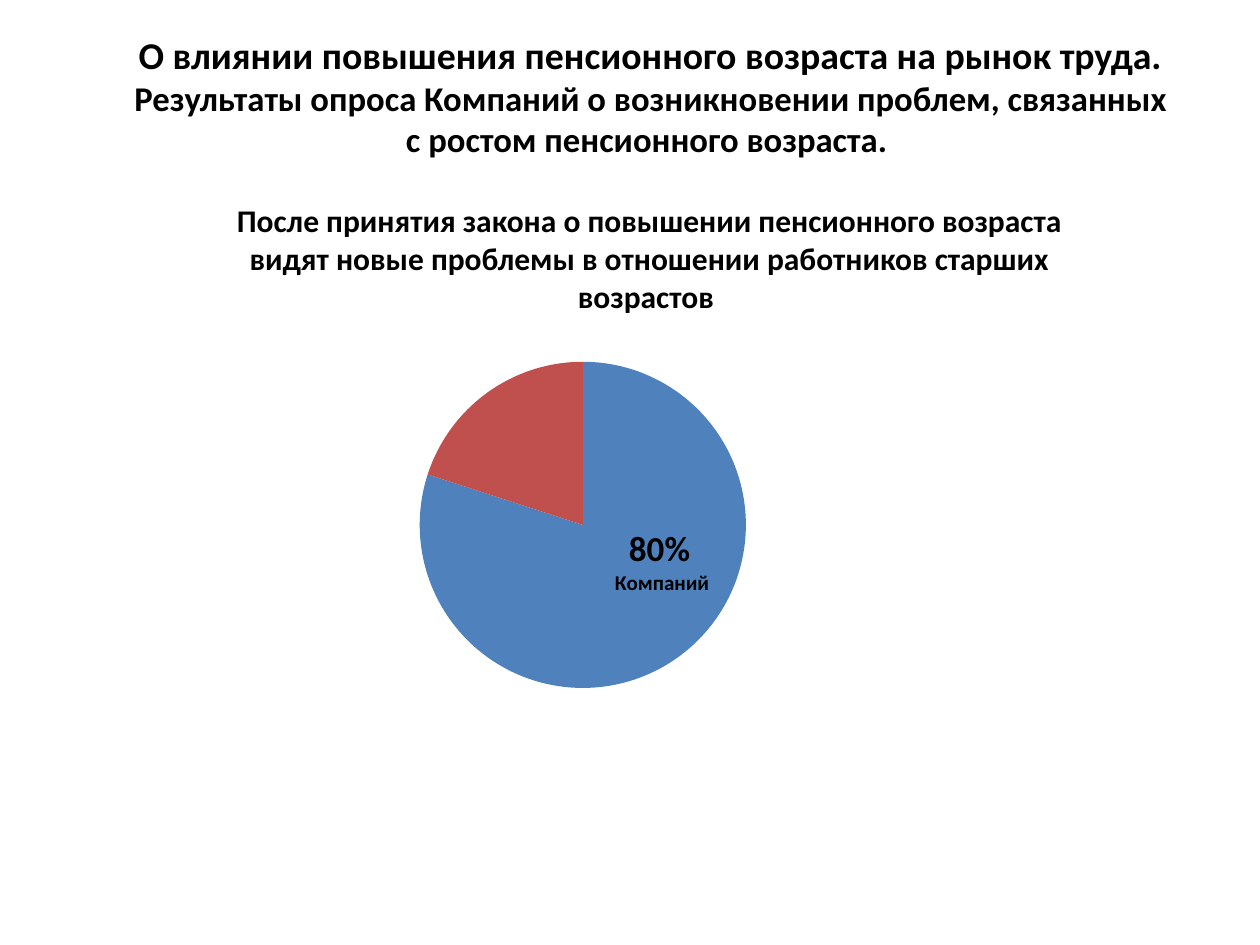
from lxml import etree
from pptx import Presentation
from pptx.chart.data import CategoryChartData
from pptx.dml.color import RGBColor
from pptx.enum.chart import XL_CHART_TYPE, XL_LABEL_POSITION
from pptx.enum.text import MSO_ANCHOR, PP_ALIGN
from pptx.oxml.ns import qn
from pptx.util import Emu, Pt

PIE = XL_CHART_TYPE.PIE
INSIDE = XL_LABEL_POSITION.CENTER
MIDDLE = MSO_ANCHOR.MIDDLE
CENTER = PP_ALIGN.CENTER

PX = 914400 // 126
BLACK = RGBColor(0, 0, 0)
BLUE = RGBColor(0x4F, 0x81, 0xBD)
RED = RGBColor(0xC0, 0x50, 0x4D)


def layout(**values):
    """Return a manual chart layout; values are shares of the chart size."""
    root = etree.Element(qn("c:layout"))
    manual = etree.SubElement(root, qn("c:manualLayout"))
    for name, value in values.items():
        etree.SubElement(manual, qn(f"c:{name}")).set("val", str(value))
    return root


class Deck:
    font = "Calibri"

    def __init__(self, width, height):
        self.prs = Presentation()
        self.prs.slide_width = Emu(width * PX)
        self.prs.slide_height = Emu(height * PX)
        self.slide = self.prs.slides.add_slide(self.prs.slide_layouts[5])

    def style(self, font, size, bold=True):
        font.name, font.size, font.bold = self.font, Pt(size), bold
        font.color.rgb = BLACK

    def title(self, box, parts):
        """Fill the title with (text, size) runs."""
        shape = self.slide.shapes.title
        shape.left, shape.top, shape.width, shape.height = (Emu(v * PX) for v in box)
        frame = shape.text_frame
        frame.word_wrap = True
        frame.vertical_anchor = MIDDLE
        para = frame.paragraphs[0]
        para.alignment = CENTER
        for text, size in parts:
            run = para.add_run()
            run.text = text
            self.style(run.font, size)

    def text(self, box, text, size):
        frame = self.slide.shapes.add_textbox(*(Emu(v * PX) for v in box)).text_frame
        frame.word_wrap = True
        para = frame.paragraphs[0]
        para.text = text
        para.alignment = CENTER
        self.style(para.font, size)

    def pie(self, box, values, colors, plot):
        data = CategoryChartData()
        data.categories = [str(i + 1) for i in range(len(values))]
        data.add_series("Series 1", values)
        frame = self.slide.shapes.add_chart(PIE, *(Emu(v * PX) for v in box), data)
        chart = frame.chart
        chart.has_title = chart.has_legend = False
        self.style(chart.font, 10, False)
        area = chart.plots[0]
        area.vary_by_categories = True
        for old in area._element.getparent().findall(qn("c:layout")):
            old.getparent().remove(old)
        area._element.getparent().insert(0, plot)
        series = area.series[0]
        for i, color in enumerate(colors):
            fill = series.points[i].format.fill
            fill.solid()
            fill.fore_color.rgb = color
        return series

    def label(self, series, index, lines, shift):
        """Label one slice with (text, size) lines, moved by a layout."""
        series.data_labels.show_value = False
        label = series.points[index].data_label
        frame = label.text_frame
        for i, (text, size) in enumerate(lines):
            para = frame.add_paragraph() if i else frame.paragraphs[0]
            run = para.add_run()
            run.text = text
            self.style(run.font, size)
        label.position = INSIDE
        series._element.find(".//" + qn("c:dLbl")).insert(1, shift)


def main():
    deck = Deck(1260, 945)
    deck.title((115, 26, 1071, 139), [
        ("О влиянии повышения пенсионного возраста на рынок труда. ", 21.6),
        ("Результаты опроса Компаний о возникновении проблем, "
         "связанных с ростом пенсионного возраста. ", 19.8),
    ])
    deck.text((223, 195, 853, 127),
              "После принятия закона о повышении пенсионного возраста видят "
              "новые проблемы в отношении работников старших возрастов ", 18)
    plot = layout(layoutTarget="inner", xMode="edge", yMode="edge",
                  x=0.23, y=0.04, w=0.45, h=0.78)
    series = deck.pie((253, 344, 725, 421), (80, 20), (BLUE, RED), plot)
    deck.label(series, 0, [("80%", 20), (" Компаний", 12)],
               layout(x=0.04, y=-0.07))
    deck.prs.save("out.pptx")


if __name__ == "__main__":
    main()
